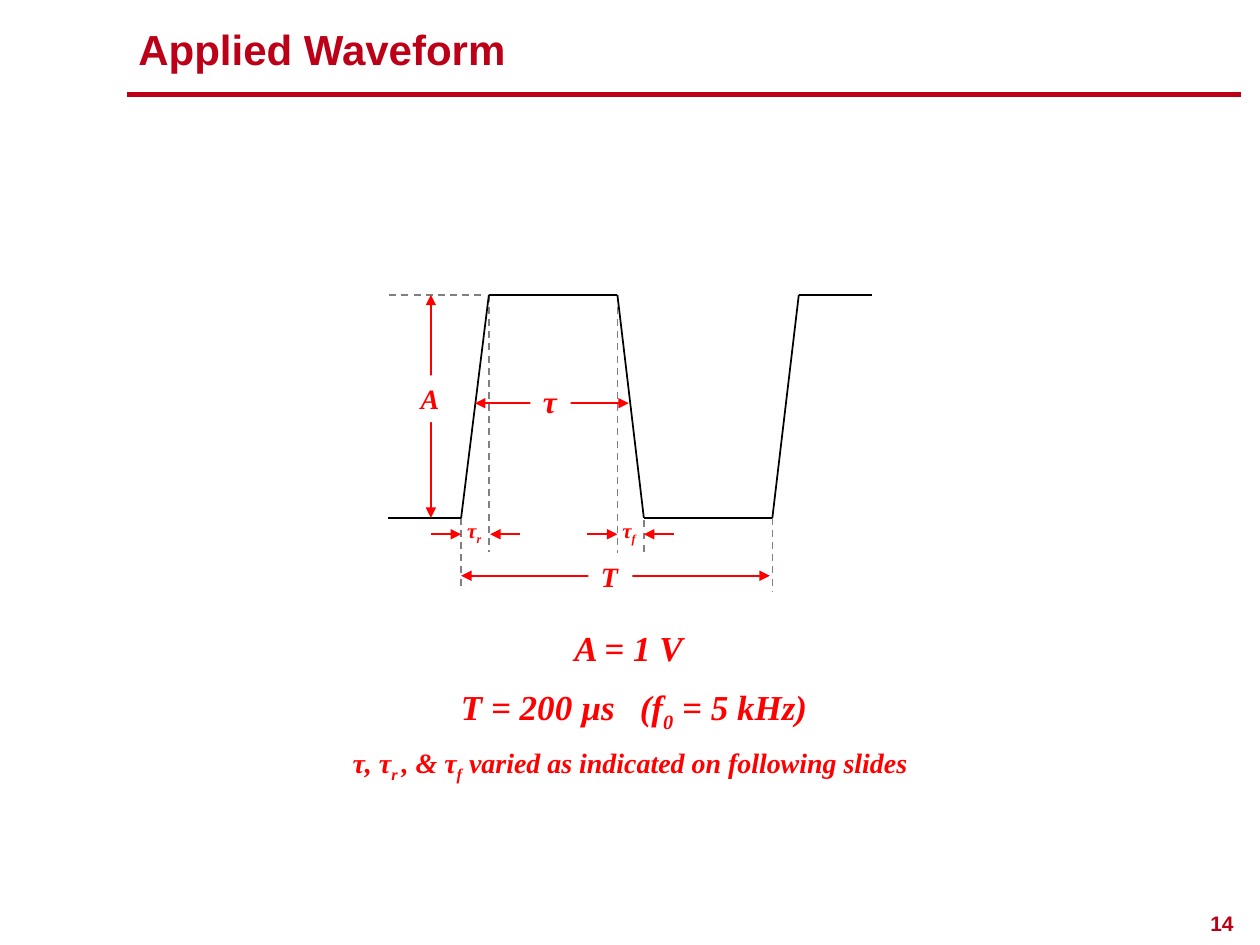
from itertools import pairwise
from lxml.etree import SubElement
from pptx import Presentation
from pptx.dml.color import RGBColor
from pptx.enum.dml import MSO_LINE
from pptx.enum.shapes import MSO_CONNECTOR
from pptx.enum.text import MSO_ANCHOR, MSO_AUTO_SIZE, PP_ALIGN
from pptx.oxml.ns import qn
from pptx.util import Inches, Pt

HUES = {"brand": "BB0018", "note": "FF0000", "wave": "000000",
        "guide": "808080", "paper": "FFFFFF"}
HEAD = {"name": "Arial", "bold": True}
MATH = {"name": "Times New Roman", "bold": True, "italic": True}


def hue(key):
    return RGBColor.from_string(HUES[key])


def add_line(slide, start, end, color, width=1, dash=False, tips=()):
    """Draw a line; tips may hold headEnd (start) and tailEnd (end)."""
    line = slide.shapes.add_connector(
        MSO_CONNECTOR.STRAIGHT, *(Inches(v) for v in (*start, *end)))
    line.line.color.rgb = hue(color)
    line.line.width = Pt(width)
    if dash:
        line.line.dash_style = MSO_LINE.DASH
    for tip in tips:
        SubElement(line.line._get_or_add_ln(), qn("a:" + tip), type="triangle")
    SubElement(line._element.spPr, qn("a:effectLst"))


def add_text(slide, box, text, size, style=MATH, color="note",
             align=PP_ALIGN.LEFT, fill=None, wrap=False):
    """Place one line of text; parts between underscores are subscripts."""
    shape = slide.shapes.add_textbox(*(Inches(v) for v in box))
    if fill:
        shape.fill.solid()
        shape.fill.fore_color.rgb = hue(fill)
    frame = shape.text_frame
    frame.word_wrap = wrap
    frame.auto_size = MSO_AUTO_SIZE.NONE if wrap else MSO_AUTO_SIZE.SHAPE_TO_FIT_TEXT
    frame.vertical_anchor = MSO_ANCHOR.MIDDLE if wrap else MSO_ANCHOR.TOP
    para = frame.paragraphs[0]
    para.alignment = align
    for i, part in enumerate(text.split("_")):
        if not part:
            continue
        run = para.add_run()
        run.text = part
        for key, value in {**style, "size": Pt(size)}.items():
            setattr(run.font, key, value)
        run.font.color.rgb = hue(color)
        if i % 2:
            run.font._element.set("baseline", "-25000")
    return para


def add_frame(slide, left, top):
    """Title, rule and page number."""
    add_text(slide, (left, top, 7.93, 0.44), "Applied Waveform", 24,
             HEAD, "brand", wrap=True)
    add_line(slide, (left + 0.01, top + 0.58), (left + 8.85, top + 0.58), "brand", 3)
    page = add_text(slide, (left + 8.48, top + 7.03, 0.41, 0.28), "14", 12,
                    HEAD, "brand", PP_ALIGN.RIGHT)
    page.line_spacing = 0.9


def add_wave(slide, left, top):
    """Trapezoid pulse with its dimensions."""
    low = 1.77
    rise, peak, fall, base, again, crest, end = 0.58, 0.8, 1.82, 2.03, 3.05, 3.26, 3.84

    def at(x, y):
        return left + x, top + y

    # Guides
    for x, y, stop in [(rise, low, 2.34), (peak, 0, 2.04), (fall, 0, 2.05),
                       (base, low + 0.02, 2.06), (again, low, 2.36)]:
        add_line(slide, at(x, y), at(x, stop), "guide", dash=True)
    add_line(slide, at(0.74, 0), at(0.01, 0), "guide", dash=True)

    # Pulse
    points = [(0, low), (rise, low), (peak, 0), (fall, 0), (base, low),
              (again, low), (crest, 0), (end, 0)]
    for start, stop in pairwise(points):
        add_line(slide, at(*start), at(*stop), "wave")

    # Amplitude, width and period arrows
    both = ("headEnd", "tailEnd")
    for start, stop in [((0.34, low), (0.34, 0)), ((0.69, 0.86), (1.91, 0.86)),
                        ((rise, 2.23), (again - 0.02, 2.23))]:
        add_line(slide, at(*start), at(*stop), "note", tips=both)

    # Rise and fall time arrows
    arm, level = 0.24, 1.9
    for first, last in [(rise, peak + 0.01), (fall, base)]:
        add_line(slide, at(first - arm, level), at(first, level), "note", tips=both[1:])
        add_line(slide, at(last, level), at(last + arm, level), "note", tips=both[:1])

    # Labels
    for x, y, wide, high, text, size, fill in [
            (1.13, 0.64, 0.32, 0.4, "τ", 18, "paper"),
            (0.53, 1.72, 0.33, 0.3, "τ_r_", 12, None),
            (1.76, 1.72, 0.32, 0.3, "τ_f_", 12, None),
            (1.59, 2.05, 0.35, 0.37, "T", 16, "paper"),
            (0.16, 0.64, 0.36, 0.37, "A", 16, "paper")]:
        add_text(slide, (*at(x, y), wide, high), text, size, fill=fill)


def add_values(slide, left, top):
    """Values of the waveform."""
    for x, y, wide, text in [(1.87, 0, 1.07, "A = 1 V"),
                             (0.97, 0.47, 1.43, "T = 200 µs"),
                             (2.39, 0.47, 1.6, "(f_0_ = 5 kHz)")]:
        add_text(slide, (left + x, top + y, wide, 0.44), text, 20)
    add_text(slide, (left, top + 0.95, 4.82, 0.37),
             "τ, τ_r _, & τ_f_ varied as indicated on following slides",
             16, align=PP_ALIGN.CENTER)


def main():
    deck = Presentation()
    deck.slide_width, deck.slide_height = Inches(10), Inches(7.5)
    slide = deck.slides.add_slide(deck.slide_layouts[6])
    add_frame(slide, 1, 0.17)
    add_wave(slide, 3.08, 2.34)
    add_values(slide, 2.59, 4.92)
    deck.save("out.pptx")


if __name__ == "__main__":
    main()
